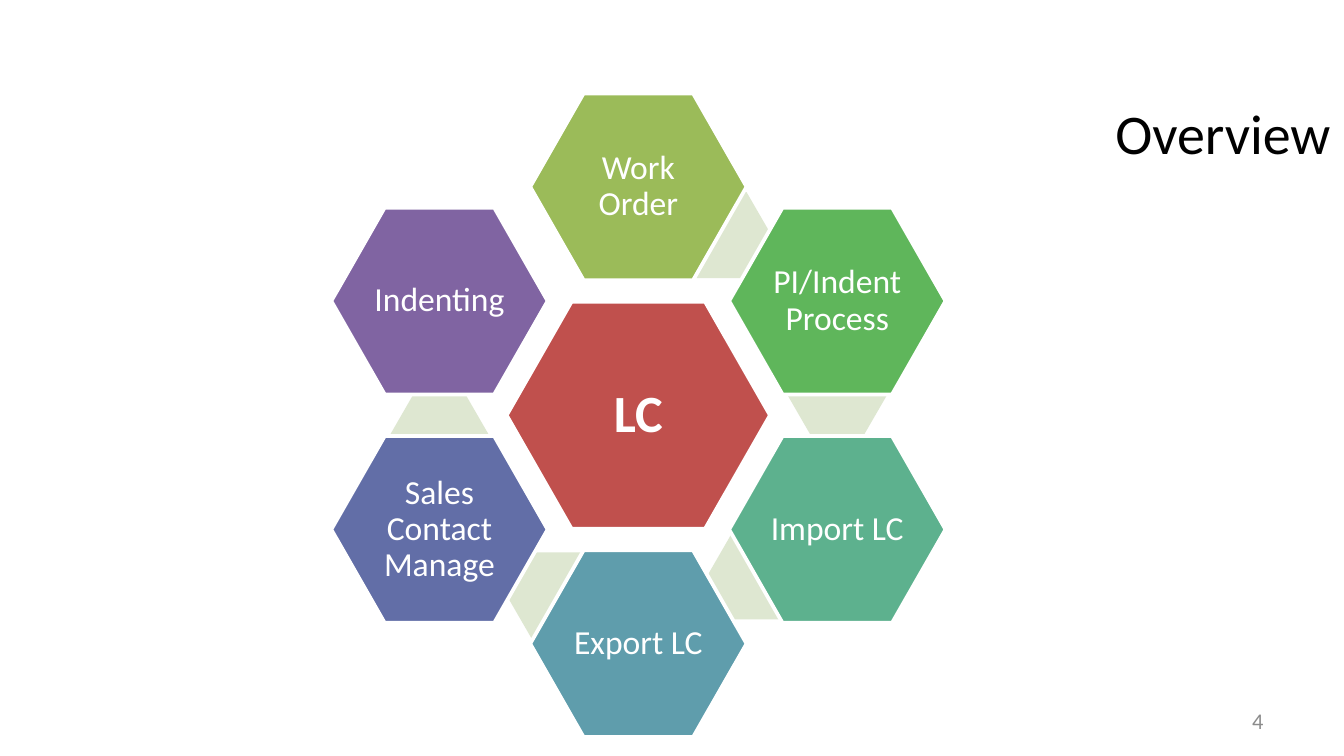
"""Build the LC overview slide: a hub hexagon ringed by six process hexagons."""
from pptx import Presentation
from pptx.dml.color import RGBColor
from pptx.enum.shapes import MSO_SHAPE
from pptx.enum.text import MSO_ANCHOR, PP_ALIGN
from pptx.util import Inches, Pt

HEXAGON = MSO_SHAPE.HEXAGON
MIDDLE = MSO_ANCHOR.MIDDLE
CENTER, RIGHT = PP_ALIGN.CENTER, PP_ALIGN.RIGHT

FONT = "Calibri"
WHITE = "FFFFFF"
ACCENT = "DEE7D1"
HUB_CENTER = (4.75, 3.09)
HUB_SIZE = (1.96, 1.69)
PETAL_SIZE = (1.61, 1.39)
ACCENT_SIZE = (0.74, 0.64)
COLUMN_STEP, ROW_STEP = 1.48, 0.85

# label, fill, (column, row) on the ring, accent offset from the hub
PETALS = [
    ("Work Order", "9BBB59", (0, -2), (0.62, -1.34)),
    ("PI/Indent Process", "5FB65B", (1, -1), (1.48, -0.15)),
    ("Import LC", "5DB18E", (1, 1), (0.88, 1.2)),
    ("Export LC", "5F9DAC", (0, 2), (-0.61, 1.34)),
    ("Sales Contact Manage", "626EA7", (-1, 1), (-1.48, 0.15)),
    ("Indenting", "8064A2", (-1, -1), None),
]
TEXTS = [
    ("Overview", (6.83, 0.73, 3.17, 0.5), 30, "000000"),
    ("4", (7.17, 5.21, 2.33, 0.3), 12, "8C8C8C"),
]


def color(value):
    return RGBColor.from_string(value)


def write(shape, text, size, text_color, alignment, bold=False):
    frame = shape.text_frame
    frame.word_wrap = True
    frame.vertical_anchor = MIDDLE
    paragraph = frame.paragraphs[0]
    paragraph.text = text
    paragraph.alignment = alignment
    font = paragraph.font
    font.name, font.size, font.bold = FONT, Pt(size), bold
    font.color.rgb = color(text_color)
    return frame


def add_hexagon(slide, offset, size, fill, adjustment):
    left, top = (middle + shift - extent / 2
                 for middle, shift, extent in zip(HUB_CENTER, offset, size))
    shape = slide.shapes.add_shape(
        HEXAGON, *(Inches(value) for value in (left, top, *size)))
    shape.adjustments[0] = adjustment
    shape.shadow.inherit = False
    shape.fill.solid()
    shape.fill.fore_color.rgb = color(fill)
    shape.line.fill.background()
    return shape


def add_labeled_hexagon(slide, offset, size, fill, label, font_size, inset, bold=False):
    shape = add_hexagon(slide, offset, size, fill, 0.286)
    shape.line.color.rgb = color(WHITE)
    shape.line.width = Pt(2)
    frame = write(shape, label, font_size, WHITE, CENTER, bold)
    frame.margin_left = frame.margin_right = Inches(inset)
    frame.margin_top = frame.margin_bottom = Inches(inset)
    frame.paragraphs[0].line_spacing = 0.9


def main():
    presentation = Presentation()
    presentation.slide_width = Inches(10)
    presentation.slide_height = Inches(10 * 9 / 16)
    slide = presentation.slides.add_slide(presentation.slide_layouts[6])

    for text, box, size, text_color in TEXTS:
        textbox = slide.shapes.add_textbox(*(Inches(value) for value in box))
        write(textbox, text, size, text_color, RIGHT)

    add_labeled_hexagon(slide, (0, 0), HUB_SIZE, "C0504D", "LC", 28, 0.04, True)
    for label, fill, (column, row), accent_offset in PETALS:
        if accent_offset:
            add_hexagon(slide, accent_offset, ACCENT_SIZE, ACCENT, 0.289)
        offset = (column * COLUMN_STEP, row * ROW_STEP)
        add_labeled_hexagon(slide, offset, PETAL_SIZE, fill, label, 18, 0.03)

    presentation.save("out.pptx")


if __name__ == "__main__":
    main()
